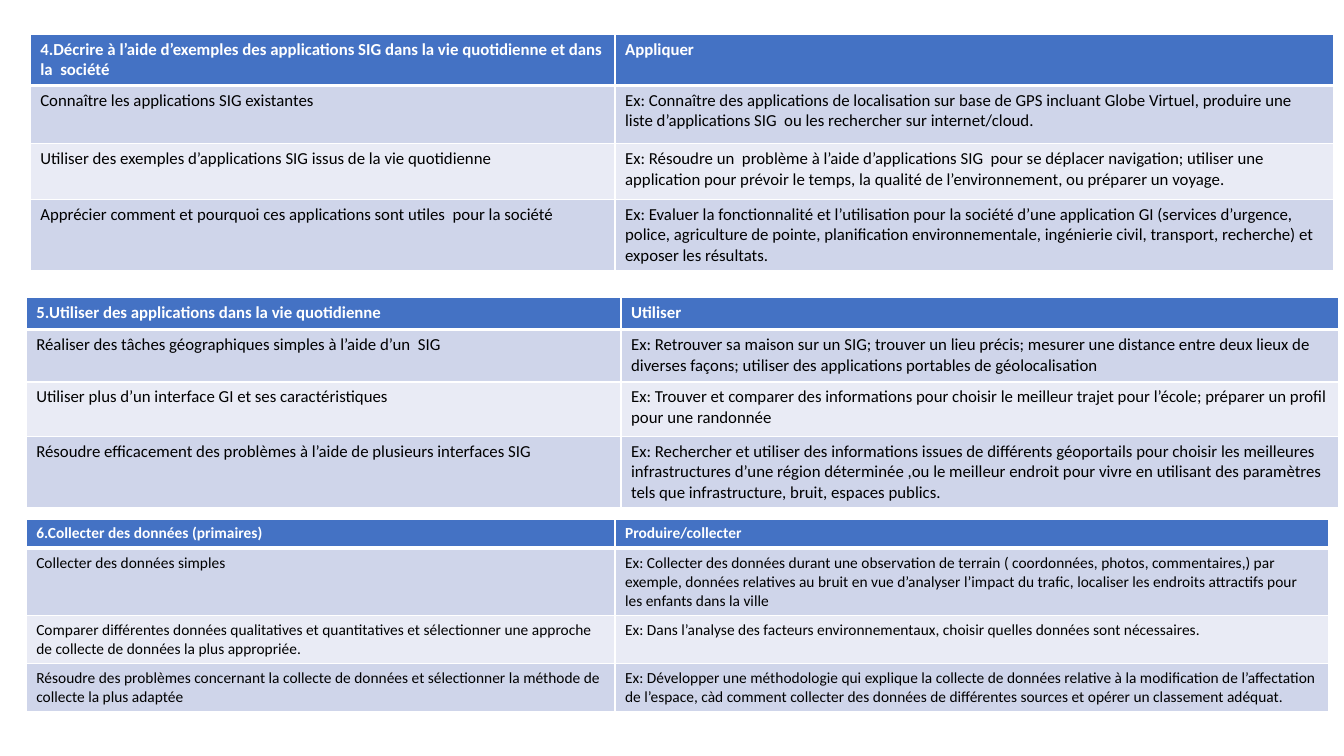
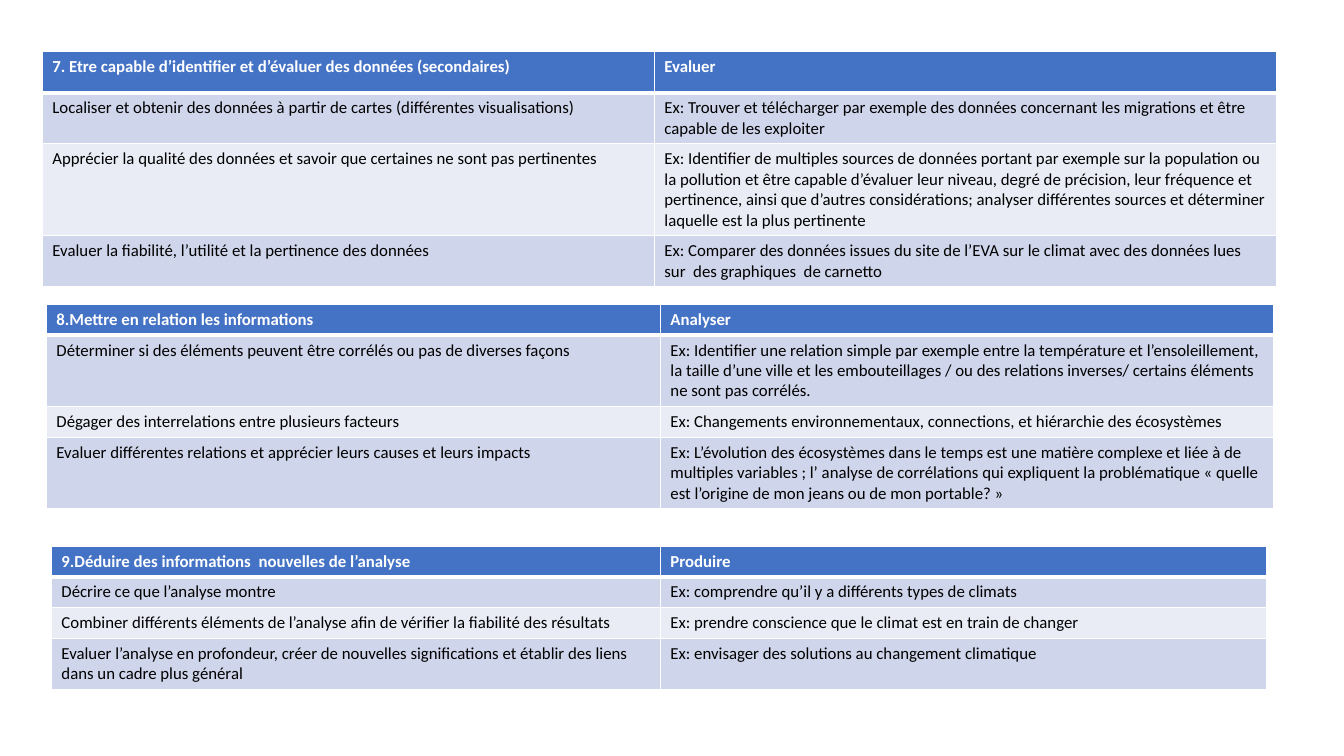
from pptx import Presentation
from pptx.dml.color import RGBColor as RGB
from pptx.oxml import parse_xml
from pptx.oxml.ns import nsdecls
from pptx.util import Inches, Pt

FONT = "Calibri"
BLUE, WHITE, BLACK = "4472C4", "FFFFFF", "000000"
FILLS = [BLUE, "CFD5EA", "E9EBF5", "CFD5EA"]

FIRST = [
    dict(at=(0.3, 0.34), cols=(5.8, 7.13), rows=(0.48, 0.58, 0.55, 0.7), size=12, text=[
        ("4.Décrire à l’aide d’exemples des applications SIG dans la vie quotidienne et dans la  société",
         "Appliquer"),
        ("Connaître les applications SIG existantes",
         "Ex: Connaître des applications de localisation sur base de GPS incluant Globe Virtuel, produire "
         "une liste d’applications SIG  ou les rechercher sur internet/cloud."),
        ("Utiliser des exemples d’applications SIG issus de la vie quotidienne",
         "Ex: Résoudre un  problème à l’aide d’applications SIG  pour se déplacer navigation; utiliser une "
         "application pour prévoir le temps, la qualité de l’environnement, ou préparer un voyage."),
        ("Apprécier comment et pourquoi ces applications sont utiles  pour la société",
         "Ex: Evaluer la fonctionnalité et l’utilisation pour la société d’une application GI (services "
         "d’urgence, police, agriculture de pointe, planification environnementale, ingénierie civil, "
         "transport, recherche) et exposer les résultats.")]),
    dict(at=(0.26, 2.95), cols=(5.9, 7.12), rows=(0.32, 0.52, 0.54, 0.7), size=12, text=[
        ("5.Utiliser des applications dans la vie quotidienne", "Utiliser"),
        ("Réaliser des tâches géographiques simples à l’aide d’un  SIG",
         "Ex: Retrouver sa maison sur un SIG; trouver un lieu précis; mesurer une distance entre deux lieux "
         "de diverses façons; utiliser des applications portables de géolocalisation"),
        ("Utiliser plus d’un interface GI et ses caractéristiques",
         "Ex: Trouver et comparer des informations pour choisir le meilleur trajet pour l’école; préparer "
         "un profil pour une randonnée"),
        ("Résoudre efficacement des problèmes à l’aide de plusieurs interfaces SIG",
         "Ex: Rechercher et utiliser des informations issues de différents géoportails pour choisir les "
         "meilleures infrastructures d’une région déterminée ,ou le meilleur endroit pour vivre en "
         "utilisant des paramètres tels que infrastructure, bruit, espaces publics.")]),
    dict(at=(0.26, 5.15), cols=(5.84, 7.08), rows=(0.28, 0.65, 0.47, 0.47), size=11, text=[
        ("6.Collecter des données (primaires)", "Produire/collecter"),
        ("Collecter des données simples",
         "Ex: Collecter des données durant une observation de terrain ( coordonnées, photos, commentaires,) "
         "par exemple, données relatives au bruit en vue d’analyser l’impact du trafic, localiser les "
         "endroits attractifs pour les enfants dans la ville"),
        ("Comparer différentes données qualitatives et quantitatives et sélectionner une approche de "
         "collecte de données la plus appropriée.",
         "Ex: Dans l’analyse des facteurs environnementaux, choisir quelles données sont nécessaires."),
        ("Résoudre des problèmes concernant la collecte de données et sélectionner la méthode de collecte "
         "la plus adaptée",
         "Ex: Développer une méthodologie qui explique la collecte de données relative à la modification "
         "de l’affectation de l’espace, càd comment collecter des données de différentes sources et opérer "
         "un classement adéquat.")]),
]

SECOND = [
    dict(at=(0.42, 0.51), cols=(6.07, 6.17), rows=(0.41, 0.5, 0.91, 0.5), size=12, text=[
        ("7. Etre capable d’identifier et d’évaluer des données (secondaires)", "Evaluer"),
        ("Localiser et obtenir des données à partir de cartes (différentes visualisations)",
         "Ex: Trouver et télécharger par exemple des données concernant les migrations et être capable de "
         "les exploiter"),
        ("Apprécier la qualité des données et savoir que certaines ne sont pas pertinentes",
         "Ex: Identifier de multiples sources de données portant par exemple sur la population ou la "
         "pollution et être capable d’évaluer leur niveau, degré de précision, leur fréquence et "
         "pertinence, ainsi que d’autres considérations; analyser différentes sources et déterminer "
         "laquelle est la plus pertinente"),
        ("Evaluer la fiabilité, l’utilité et la pertinence des données",
         "Ex: Comparer des données issues du site de l’EVA sur le climat avec des données lues sur  des "
         "graphiques  de carnetto")]),
    dict(at=(0.46, 3.02), cols=(6.09, 6.08), rows=(0.3, 0.7, 0.3, 0.7), size=12, text=[
        ("8.Mettre en relation les informations", "Analyser"),
        ("Déterminer si des éléments peuvent être corrélés ou pas de diverses façons",
         "Ex: Identifier une relation simple par exemple entre la température et l’ensoleillement, la "
         "taille d’une ville et les embouteillages / ou des relations inverses/ certains éléments ne sont "
         "pas corrélés."),
        ("Dégager des interrelations entre plusieurs facteurs",
         "Ex: Changements environnementaux, connections, et hiérarchie des écosystèmes"),
        ("Evaluer différentes relations et apprécier leurs causes et leurs impacts",
         "Ex: L’évolution des écosystèmes dans le temps est une matière complexe et liée à de multiples "
         "variables ; l’ analyse de corrélations qui expliquent la problématique « quelle est l’origine de "
         "mon jeans ou de mon portable? »")]),
    dict(at=(0.51, 5.42), cols=(6.04, 6.01), rows=(0.3, 0.3, 0.3, 0.5), size=12, text=[
        ("9.Déduire des informations  nouvelles de l’analyse", "Produire"),
        ("Décrire ce que l’analyse montre", "Ex: comprendre qu’il y a différents types de climats"),
        ("Combiner différents éléments de l’analyse afin de vérifier la fiabilité des résultats",
         "Ex: prendre conscience que le climat est en train de changer"),
        ("Evaluer l’analyse en profondeur, créer de nouvelles significations et établir des liens dans un "
         "cadre plus général",
         "Ex: envisager des solutions au changement climatique")]),
]


def paint(fill, color):
    """Give a fill one solid colour."""
    fill.solid()
    fill.fore_color.rgb = RGB.from_string(color)


def edge(cell, row):
    """Draw white cell borders, thick below the header."""
    widths = dict(L=1, R=1, T=3 if row == 1 else 1, B=3 if row == 0 else 1)
    props = cell._tc.get_or_add_tcPr()
    for side, width in widths.items():
        props.append(parse_xml(
            f'<a:ln{side} {nsdecls("a")} w="{Pt(width)}"><a:solidFill>'
            f'<a:srgbClr val="{WHITE}"/></a:solidFill></a:ln{side}>'))


def style(cell, text, row, size):
    """Fill one cell and set its text in the style of its row."""
    edge(cell, row)
    paint(cell.fill, FILLS[row])
    cell.text_frame.text = text
    font = cell.text_frame.paragraphs[0].runs[0].font
    font.name, font.size, font.bold = FONT, Pt(size), row == 0
    paint(font.fill, BLACK if row else WHITE)


def grid(slide, at, cols, rows, size, text):
    """Place one skill table with its header and three levels."""
    box = [Inches(v) for v in (*at, sum(cols), sum(rows))]
    table = slide.shapes.add_table(len(rows), len(cols), *box).table
    for col, width in zip(table.columns, cols):
        col.width = Inches(width)
    for r, (height, line) in enumerate(zip(rows, text)):
        table.rows[r].height = Inches(height)
        for c, words in enumerate(line):
            style(table.cell(r, c), words, r, size)


def main():
    """Build the slides and save them."""
    deck = Presentation()
    deck.slide_width, deck.slide_height = Inches(13.33), Inches(7.5)
    for tables in (FIRST, SECOND):
        slide = deck.slides.add_slide(deck.slide_layouts[6])
        for table in tables:
            grid(slide, **table)
    deck.save("out.pptx")


if __name__ == "__main__":
    main()
